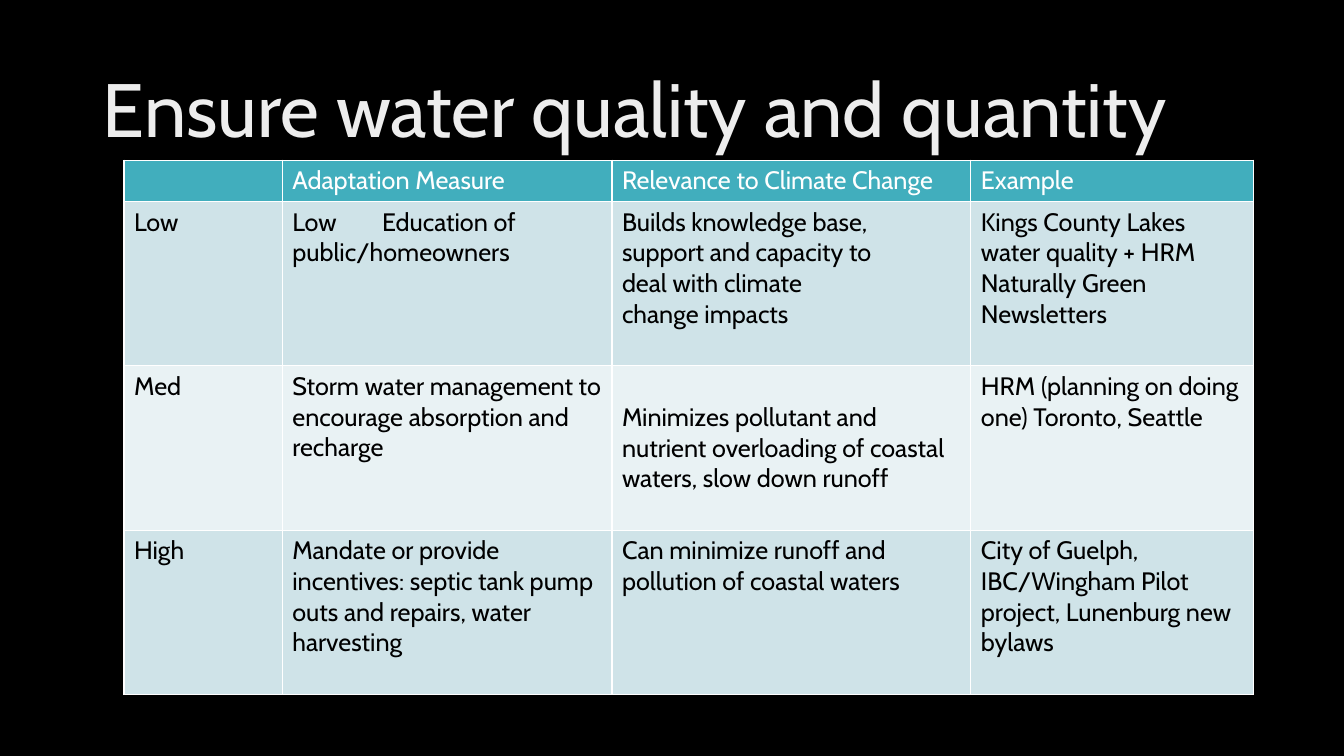
"""Build the slide on adaptation measures for water quality and quantity."""
from lxml import etree
from pptx import Presentation
from pptx.dml.color import RGBColor
from pptx.enum.text import MSO_ANCHOR, MSO_AUTO_SIZE, PP_ALIGN
from pptx.oxml.ns import qn
from pptx.util import Inches, Pt

MIDDLE, TOP = MSO_ANCHOR.MIDDLE, MSO_ANCHOR.TOP
LEFT = PP_ALIGN.LEFT
NO_AUTOFIT = MSO_AUTO_SIZE.NONE

HEADING = "Ensure water quality and quantity"
MEASURES = [
    ["", "Adaptation Measure", "Relevance to Climate Change", "Example"],
    ["Low", "Low\tEducation of\npublic/homeowners",
     "Builds knowledge base,\nsupport and capacity to\ndeal with climate\nchange impacts",
     "Kings County Lakes\nwater quality + HRM\nNaturally Green\nNewsletters"],
    ["Med", "Storm water management to encourage absorption and recharge",
     "Minimizes pollutant and nutrient overloading of coastal waters, slow down runoff",
     "HRM (planning on doing one) Toronto, Seattle"],
    ["High",
     "Mandate or provide incentives: septic tank pump outs and repairs, water harvesting",
     "Can minimize runoff and pollution of coastal waters",
     "City of Guelph, IBC/Wingham Pilot project, Lunenburg new bylaws"],
]
CENTERED_CELL = (2, 2)
COLUMN_WIDTHS = [1.57, 3.27, 3.56, 2.8]
HEADER_HEIGHT, MEASURE_HEIGHT = 0.41, 1.63
TAB_POSITION = 0.89
FONT = "Cabin"
BLACK, WHITE, HEADING_COLOR = "000000", "FFFFFF", "EDEDED"
HEADER_FILL, BAND_FILLS = "41AEBD", ["E9F2F4", "CFE3E8"]


def paint(fill, color):
    fill.solid()
    fill.fore_color.rgb = RGBColor.from_string(color)


def format_runs(paragraph, size, color):
    for run in paragraph.runs:
        run.font.name = FONT
        run.font.size = Pt(size)
        run.font.bold = False
        paint(run.font.fill, color)


def add_borders(cell):
    properties = cell._tc.get_or_add_tcPr()
    for side in ("lnL", "lnR", "lnT", "lnB"):
        line = etree.SubElement(properties, qn(f"a:{side}"), w=str(Pt(1)))
        solid = etree.SubElement(line, qn("a:solidFill"))
        etree.SubElement(solid, qn("a:srgbClr"), val=WHITE)


def add_tab_stop(paragraph):
    tabs = etree.SubElement(paragraph._p.get_or_add_pPr(), qn("a:tabLst"))
    etree.SubElement(tabs, qn("a:tab"), pos=str(Inches(TAB_POSITION)), algn="l")


def add_heading(slide):
    heading = slide.shapes.title
    heading.left, heading.top = Inches(0.92), Inches(0.4)
    heading.width, heading.height = Inches(11.5), Inches(1.45)
    frame = heading.text_frame
    frame.text = HEADING
    frame.word_wrap = True
    frame.auto_size = NO_AUTOFIT
    frame.vertical_anchor = MIDDLE
    paragraph = frame.paragraphs[0]
    paragraph.alignment = LEFT
    paragraph.line_spacing = 0.9
    format_runs(paragraph, 54, HEADING_COLOR)


def add_measures(slide):
    row_heights = [HEADER_HEIGHT] + [MEASURE_HEIGHT] * (len(MEASURES) - 1)
    measures = slide.shapes.add_table(
        len(MEASURES), len(COLUMN_WIDTHS), Inches(1.23), Inches(1.59),
        Inches(sum(COLUMN_WIDTHS)), Inches(sum(row_heights))).table
    for column, width in zip(measures.columns, COLUMN_WIDTHS):
        column.width = Inches(width)
    for row, height in zip(measures.rows, row_heights):
        row.height = Inches(height)
    for r, entries in enumerate(MEASURES):
        for c, entry in enumerate(entries):
            cell = measures.cell(r, c)
            cell.text = entry
            cell.vertical_anchor = MIDDLE if (r, c) == CENTERED_CELL else TOP
            add_borders(cell)
            paint(cell.fill, BAND_FILLS[r % 2] if r else HEADER_FILL)
            for paragraph in cell.text_frame.paragraphs:
                if "\t" in paragraph.text:
                    add_tab_stop(paragraph)
                format_runs(paragraph, 18, BLACK if r else WHITE)


def main():
    deck = Presentation()
    deck.slide_width, deck.slide_height = Inches(13.33), Inches(7.5)
    slide = deck.slides.add_slide(deck.slide_layouts[5])
    paint(slide.background.fill, BLACK)
    add_heading(slide)
    add_measures(slide)
    deck.save("out.pptx")


if __name__ == "__main__":
    main()
